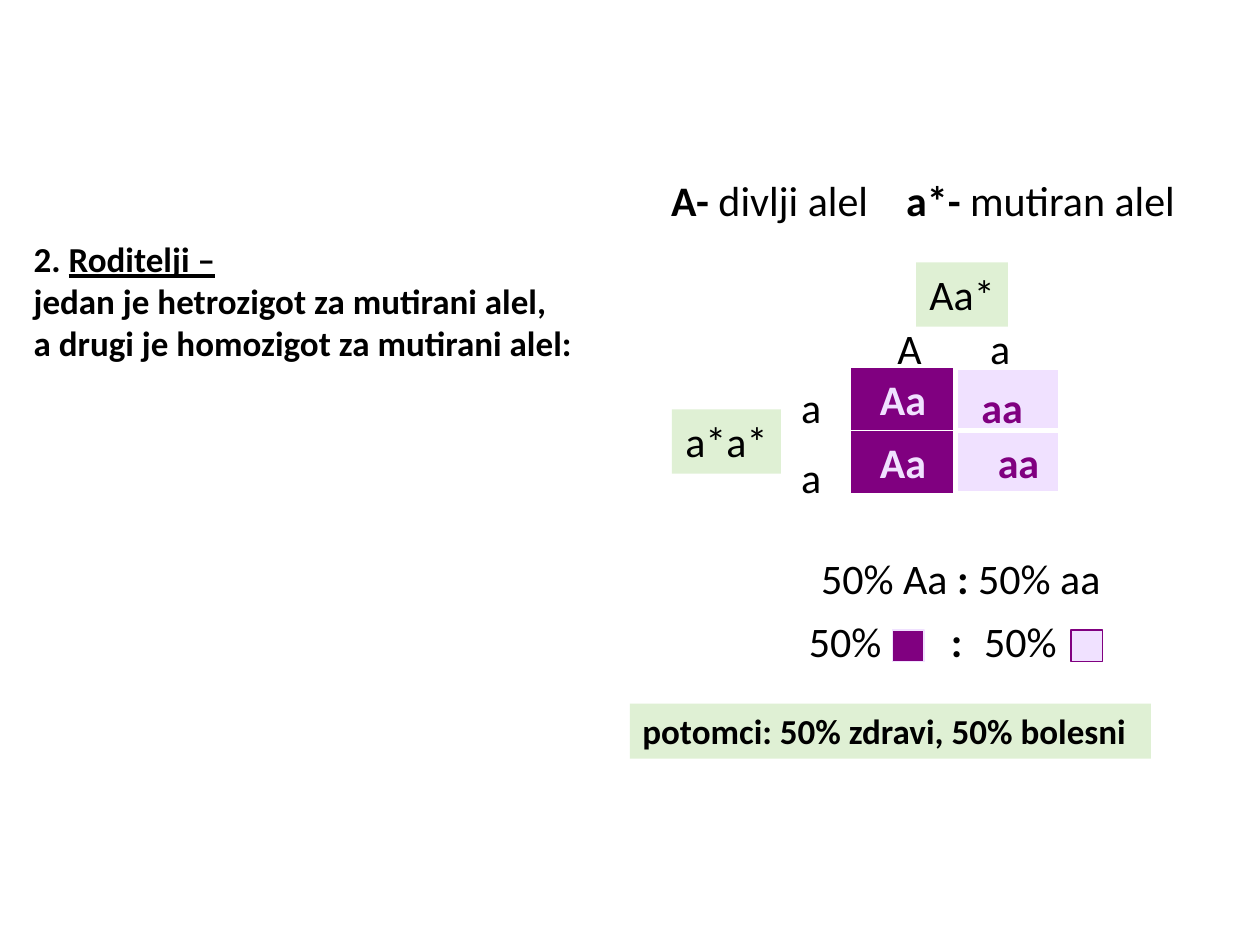
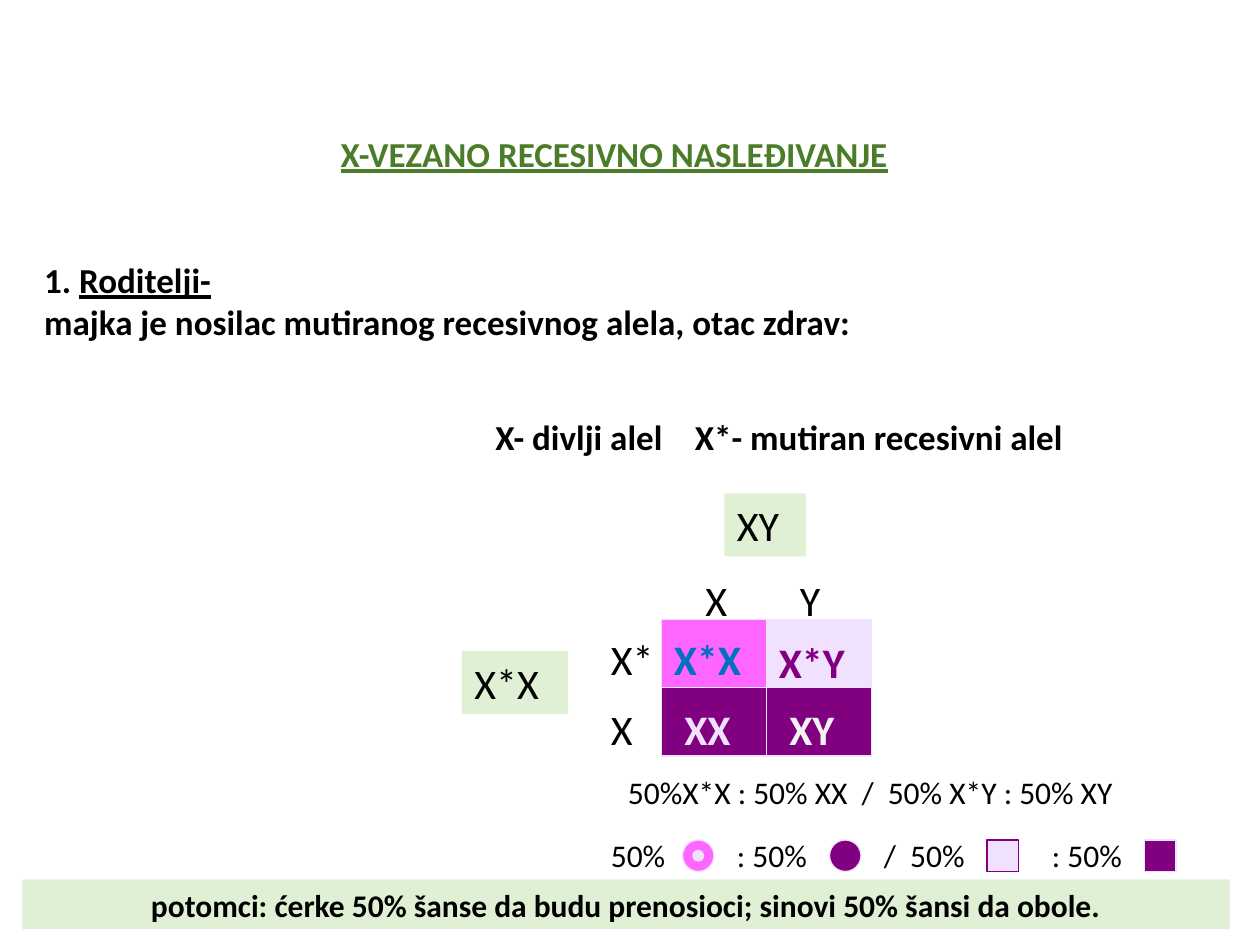
import pptx
import pptx.dml.color
import pptx.enum.shapes
import pptx.enum.text
import pptx.oxml.ns
import pptx.util
from lxml import etree

PX = 9525  # EMU per px, 96 px to the inch
FONT = "Calibri"
COLORS = {
    "text": "000000",
    "title": "4A7C29",
    "band": "DFF0D4",
    "dark": "800080",
    "light": "F0E1FF",
    "pink": "FF66FF",
    "blue": "0070C0",
    "pale": "F2F2F2",
    "white": "FFFFFF",
}
LEFT = pptx.enum.text.PP_ALIGN.LEFT
CENTER = pptx.enum.text.PP_ALIGN.CENTER
RECT = pptx.enum.shapes.MSO_SHAPE.RECTANGLE
OVAL = pptx.enum.shapes.MSO_SHAPE.OVAL
SWATCH = 24


def rgb(name):
    return pptx.dml.color.RGBColor.from_string(COLORS[name])


def emu(box):
    return [length * PX for length in box]


def write(shape, paragraphs, size=24, color="text", align=LEFT, tabs=()):
    """Fill a shape with text; each paragraph is a list of (text, style), style using b and u."""
    frame = shape.text_frame
    frame.word_wrap = True
    frame.auto_size = pptx.enum.text.MSO_AUTO_SIZE.NONE
    frame.vertical_anchor = pptx.enum.text.MSO_ANCHOR.TOP
    for index, spans in enumerate(paragraphs):
        para = frame.add_paragraph() if index else frame.paragraphs[0]
        para.alignment = align
        para.space_before = pptx.util.Pt(0)
        for text, style in spans:
            span = para.add_run()
            span.text = text
            span.font.name = FONT
            span.font.size = pptx.util.Pt(size)
            span.font.bold = "b" in style
            span.font.underline = "u" in style
            span.font.color.rgb = rgb(color)
        if tabs:
            add_tabs(para, tabs)


def add_tabs(para, tabs):
    stops = etree.SubElement(para._p.get_or_add_pPr(), pptx.oxml.ns.qn("a:tabLst"))
    for position in tabs:
        etree.SubElement(stops, pptx.oxml.ns.qn("a:tab"), pos=str(position * PX), algn="l")


def add_label(slide, box, text, style="", **options):
    add_rich_label(slide, box, [(text, style)], **options)


def add_rich_label(slide, box, spans, **options):
    write(slide.shapes.add_textbox(*emu(box)), [spans], **options)


def add_block(slide, box, fill, line=None, width=0.75, kind=RECT):
    block = slide.shapes.add_shape(kind, *emu(box))
    block.shadow.inherit = False
    block.fill.solid()
    block.fill.fore_color.rgb = rgb(fill)
    if line:
        block.line.color.rgb = rgb(line)
        block.line.width = pptx.util.Pt(width)
    else:
        block.line.fill.background()
    return block


def add_band(slide, box, text, style="", **options):
    write(add_block(slide, box, "band"), [[(text, style)]], **options)


def add_swatch(slide, left, top, fill, kind=RECT):
    line = "dark" if fill == "light" else "light"
    add_block(slide, (left, top, SWATCH, SWATCH), fill, line, kind=kind)


def add_case(slide, box, paragraphs):
    """Describe the parents in the body placeholder."""
    body = slide.placeholders[1]
    body.left, body.top, body.width, body.height = emu(box)
    write(body, paragraphs, size=20)
    for para in body.text_frame.paragraphs:
        properties = para._p.get_or_add_pPr()
        properties.set("marL", "0")
        properties.set("indent", "0")
        etree.SubElement(properties, pptx.oxml.ns.qn("a:buNone"))


def add_title(slide, box, text):
    title = slide.shapes.title
    title.left, title.top, title.width, title.height = emu(box)
    write(title, [[(text, "bu")]], size=20, color="title", align=CENTER)


def add_cross(slide, box, cells, columns, rows, parents, align):
    """Draw a 2 by 2 inheritance square in box, with gametes and parents around it."""
    left, top, width, height = box
    cell_width, cell_height = width // 2, height // 2
    for index, (fill, line, weight, *_) in enumerate(cells):
        row, column = divmod(index, 2)
        cell = (left + column * cell_width, top + row * cell_height, cell_width, cell_height)
        add_block(slide, cell, fill, line, weight)
    for *_, text, color, x, y, label_width in cells:
        add_label(slide, (left + x, top + y, label_width, 48), text, "b", color=color, align=align)
    for text, x, label_width in columns:
        add_label(slide, (left + x, top - 39, label_width, 48), text, align=align)
    for (text, label_width), y in zip(rows, (6, 59)):
        add_label(slide, (left - 48, top + y, label_width, 48), text, align=align)
    for text, x, y, band_width, band_height in parents:
        add_band(slide, (left + x, top + y, band_width, band_height), text, align=align)


def add_autosomal_ratio(slide, left, top):
    add_rich_label(slide, (left, top, 264, 48),
                   [("50% Aa ", ""), (":", "b"), (" 50% aa", "")], align=CENTER)
    for text, style, x, width in (("50%", "", 0, 88), (":", "b", 112, 34), ("50%", "", 136, 83)):
        add_label(slide, (left + x, top + 48, width, 48), text, style, align=CENTER)
    add_swatch(slide, left + 80, top + 64, "dark")
    add_swatch(slide, left + 216, top + 64, "light")


def add_sex_linked_ratio(slide, left, top):
    add_label(slide, (left + 13, top, 440, 38), "50%X*X : 50% XX\t/\t50% X*Y : 50% XY",
              size=18, tabs=(178, 198))
    for text, x, width in (("50%", 0, 88), (": 50%", 96, 81), ("/\t50%", 208, 90), (": 50%", 336, 81)):
        add_label(slide, (left + x, top + 48, width, 38), text, size=18, tabs=(20,))
    swatches = (("pink", OVAL, 64), ("dark", OVAL, 176), ("light", RECT, 296), ("dark", RECT, 416))
    for fill, kind, x in swatches:
        add_swatch(slide, left + x, top + 56, fill, kind)
    add_block(slide, (left + 72, top + 64, 8, 8), "light", "light", kind=OVAL)


def build_autosomal_slide(deck):
    slide = deck.slides.add_slide(deck.slide_layouts[1])
    empty_title = slide.shapes.title.element
    empty_title.getparent().remove(empty_title)
    add_case(slide, (16, 176, 538, 107), [
        [("2. ", "b"), ("Roditelji –", "bu")],
        [("jedan je hetrozigot za mutirani alel,", "b")],
        [("a drugi je homozigot za mutirani alel:", "b")],
    ])
    add_rich_label(slide, (502, 128, 458, 48),
                   [("A- ", "b"), ("divlji alel\t", ""), ("a*- ", "b"), ("mutiran alel", "")],
                   tabs=(179,))
    add_cross(
        slide, (648, 280, 160, 96),
        cells=[
            ("dark", "white", 0.75, "Aa", "light", 0, 0, 80),
            ("light", "white", 3, "aa", "dark", 90, 6, 51),
            ("dark", "white", 0.75, "Aa", "light", 0, 48, 80),
            ("light", "white", 3, "aa", "dark", 88, 48, 80),
        ],
        columns=[("A", 26, 38), ("a", 96, 36)],
        rows=[("a", 36), ("a", 36)],
        parents=[("Aa*", 50, -80, 70, 49), ("a*a*", -136, 32, 83, 49)],
        align=CENTER,
    )
    add_autosomal_ratio(slide, 600, 416)
    add_band(slide, (480, 536, 397, 42), "potomci: 50% zdravi, 50% bolesni", "b", size=20)


def build_sex_linked_slide(deck):
    slide = deck.slides.add_slide(deck.slide_layouts[1])
    add_title(slide, (120, 96, 696, 42), "X-VEZANO RECESIVNO NASLEĐIVANJE")
    add_case(slide, (24, 192, 848, 74), [
        [("1. ", "b"), ("Roditelji-", "bu")],
        [("majka je nosilac mutiranog recesivnog alela, otac zdrav:", "b")],
    ])
    add_label(slide, (368, 312, 576, 42), "X- divlji alel\tX*- mutiran recesivni alel", "b",
              size=20, tabs=(152,))
    add_cross(
        slide, (504, 472, 160, 104),
        cells=[
            ("pink", "light", 0.75, "X*X", "blue", 0, 6, 96),
            ("light", "light", 0.75, "X*Y", "dark", 80, 8, 75),
            ("dark", "light", 0.75, "XX", "light", 8, 59, 62),
            ("dark", "light", 0.75, "XY", "pale", 88, 59, 69),
        ],
        columns=[("X", 24, 42), ("Y", 96, 40)],
        rows=[("X*", 58), ("X", 42)],
        parents=[("XY", 48, -96, 62, 48), ("X*X", -152, 24, 81, 48)],
        align=LEFT,
    )
    add_sex_linked_ratio(slide, 456, 584)
    add_band(slide, (17, 670, 920, 38),
             "potomci: ćerke 50% šanse da budu prenosioci; sinovi 50% šansi da obole.", "b",
             size=18, align=CENTER)


def main():
    deck = pptx.Presentation()
    deck.slide_width, deck.slide_height = 960 * PX, 720 * PX
    build_autosomal_slide(deck)
    build_sex_linked_slide(deck)
    deck.save("out.pptx")


if __name__ == "__main__":
    main()
